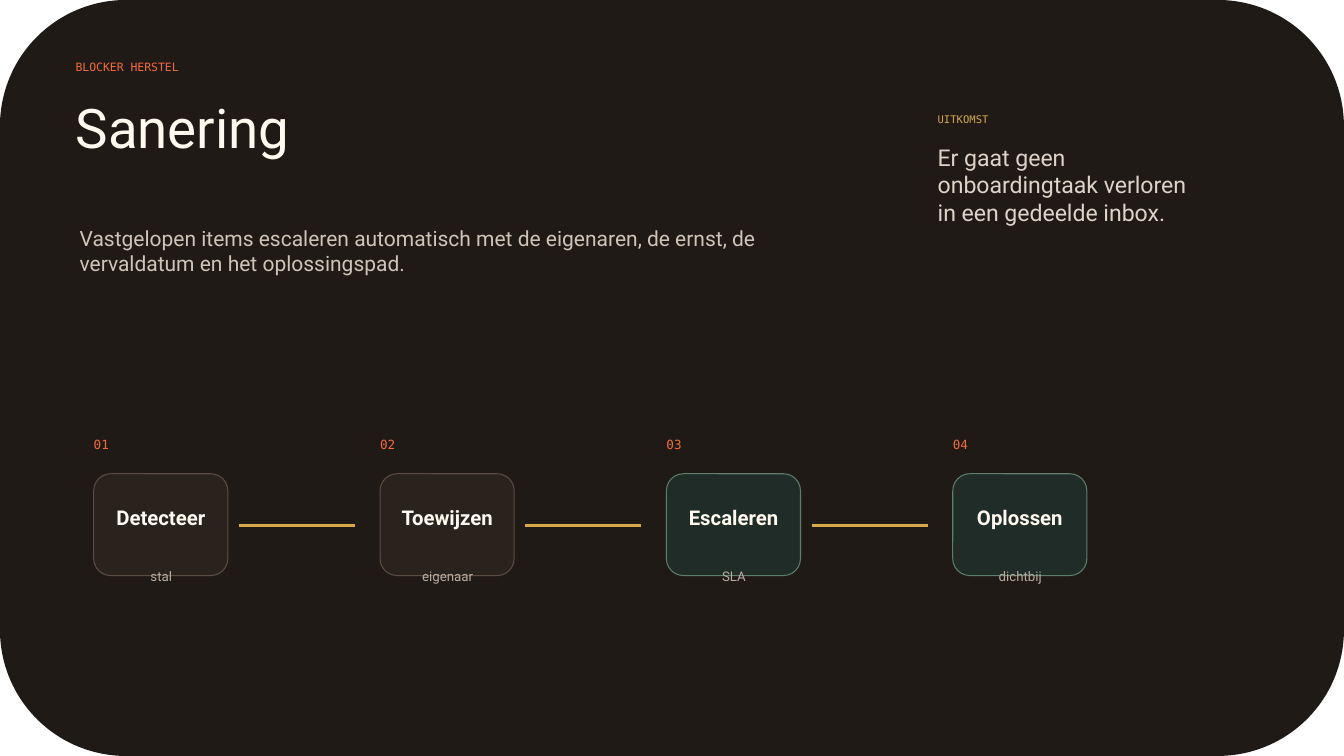
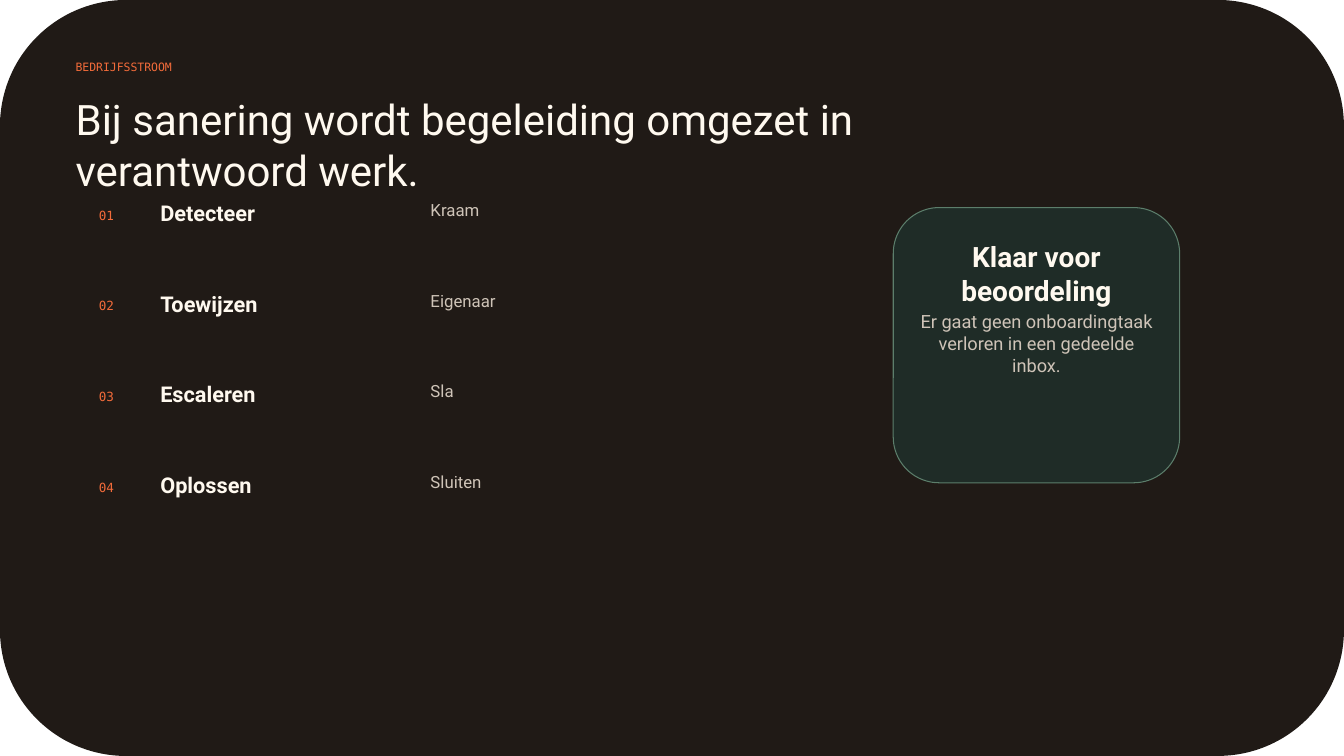
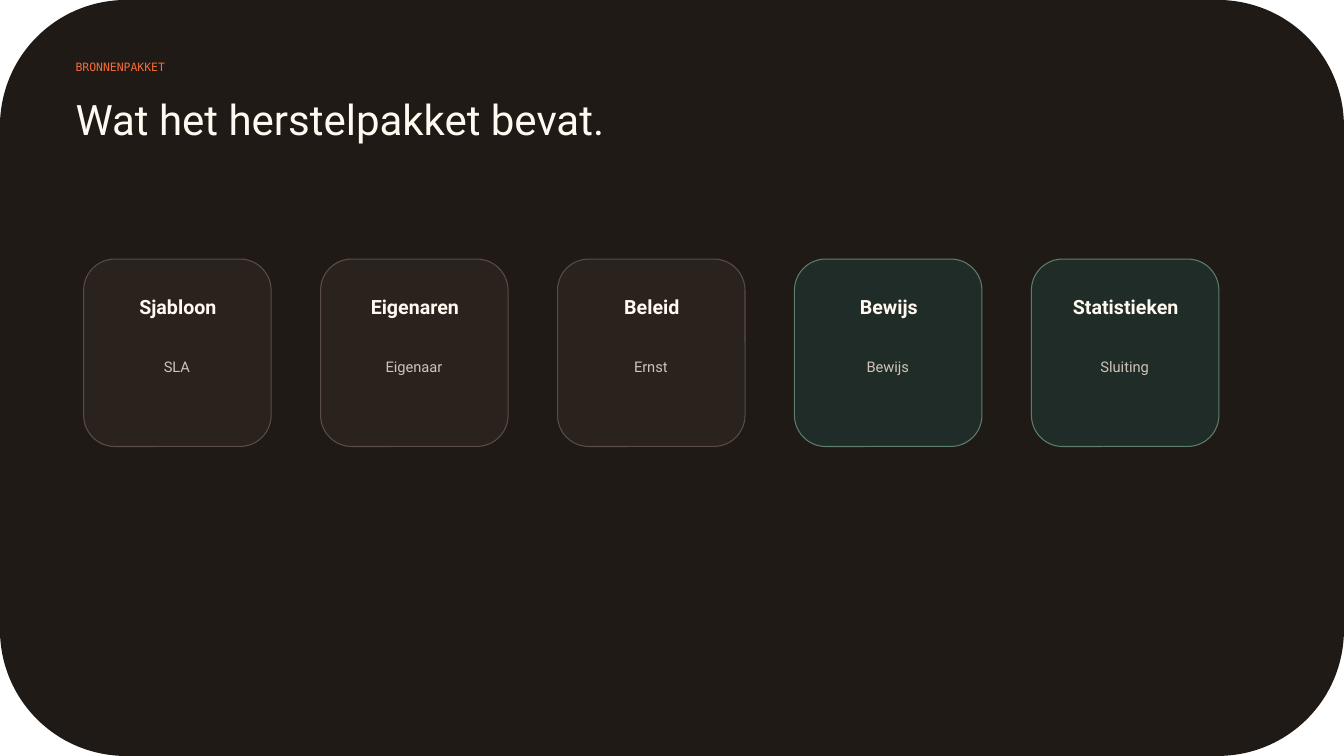
from dataclasses import dataclass

from lxml import etree
from pptx import Presentation
from pptx.dml.color import RGBColor
from pptx.enum.shapes import MSO_CONNECTOR, MSO_SHAPE
from pptx.enum.text import MSO_ANCHOR, MSO_AUTO_SIZE, PP_ALIGN
from pptx.oxml.ns import qn
from pptx.util import Inches, Pt

LEFT, CENTER = PP_ALIGN.LEFT, PP_ALIGN.CENTER
TOP = MSO_ANCHOR.TOP
FIXED = MSO_AUTO_SIZE.NONE
ROUND = MSO_SHAPE.ROUNDED_RECTANGLE
STRAIGHT = MSO_CONNECTOR.STRAIGHT
WIDE, HIGH = 13.33, 7.5


@dataclass(frozen=True)
class Theme:
    sans: str = "Roboto"
    mono: str = "DejaVu Sans Mono"
    back: str = "201A16"
    light: str = "FFF9EF"
    soft: str = "CFC4B8"
    pale: str = "DDD3C8"
    dim: str = "B9ACA0"
    accent: str = "F26B3A"
    gold: str = "D6A84F"
    link: str = "D8A84B"
    brown: tuple = ("2A221D", "5B4D44")
    green: tuple = ("1F2C27", "5C7E6B")
    hero: float = 39
    head: float = 30
    panel: float = 20
    quote: float = 16.5
    row: float = 15.5
    lead: float = 15
    step: float = 14.5
    card: float = 14
    note: float = 13
    cell: float = 12
    small: float = 10.5
    tiny: float = 9.5
    index: float = 9
    kicker: float = 8.2
    label: float = 7.5
    edge: float = 0.75
    stroke: float = 2.25


THEME = Theme()


def write(frame, text, size, color=THEME.light, font=THEME.sans, bold=False, align=LEFT):
    frame.auto_size = FIXED
    frame.word_wrap = True
    frame.vertical_anchor = TOP
    frame.margin_left = frame.margin_right = 0
    frame.margin_top = frame.margin_bottom = 0
    para = frame.paragraphs[0]
    para.alignment = align
    run = para.add_run()
    run.text = text
    run.font.name = font
    run.font.size = Pt(size)
    run.font.bold = bold
    run.font.color.rgb = RGBColor.from_string(color)


class Deck:
    def __init__(self, theme):
        self.theme = theme
        self.show = Presentation()
        self.show.slide_width = Inches(WIDE)
        self.show.slide_height = Inches(HIGH)
        self.slide = None

    def start(self, kicker, title, size, width=8.31, height=0.71):
        t = self.theme
        self.slide = self.show.slides.add_slide(self.show.slide_layouts[5])
        head = self.slide.shapes.title
        head.left, head.top = Inches(0.75), Inches(0.93)
        head.width, head.height = Inches(width), Inches(height)
        write(head.text_frame, title, size)
        back = self.box(0, 0, WIDE, HIGH, t.back)
        head._element.addprevious(back._element)
        self.mono(0.75, 0.6, 4.59, 0.28, kicker, t.kicker)

    def box(self, x, y, w, h, fill, edge=None):
        shape = self.slide.shapes.add_shape(ROUND, Inches(x), Inches(y), Inches(w), Inches(h))
        shape.shadow.inherit = False
        shape.fill.solid()
        shape.fill.fore_color.rgb = RGBColor.from_string(fill)
        if edge:
            shape.line.color.rgb = RGBColor.from_string(edge)
            shape.line.width = Pt(self.theme.edge)
        else:
            shape.line.fill.background()
        return shape

    def text(self, x, y, w, h, text, size, **style):
        box = self.slide.shapes.add_textbox(Inches(x), Inches(y), Inches(w), Inches(h))
        write(box.text_frame, text, size, **style)

    def mono(self, x, y, w, h, text, size, color=THEME.accent):
        self.text(x, y, w, h, text, size, color=color, font=self.theme.mono)

    def line(self, x, y, end):
        line = self.slide.shapes.add_connector(STRAIGHT, Inches(x), Inches(y), Inches(end), Inches(y))
        line.line.color.rgb = RGBColor.from_string(self.theme.link)
        line.line.width = Pt(self.theme.stroke)
        etree.SubElement(line._element.spPr, qn("a:effectLst"))

    def step(self, x, num, name, note, tone):
        t = self.theme
        self.mono(x, 4.33, 0.57, 0.24, f"{num:02}", t.index)
        self.box(x, 4.7, 1.33, 1.01, *tone)
        self.text(x + 0.13, 5.01, 1.07, 0.28, name, t.step, bold=True, align=CENTER)
        self.text(x + 0.09, 5.64, 1.16, 0.24, note, t.tiny, color=t.dim, align=CENTER)

    def row(self, y, num, name, note):
        t = self.theme
        self.mono(0.98, y + 0.08, 0.55, 0.24, f"{num:02}", t.index)
        self.text(1.59, y, 2.84, 0.28, name, t.row, bold=True)
        self.text(4.27, y, 3.94, 0.31, note, t.cell, color=t.soft)

    def card(self, x, name, note, tone):
        t = self.theme
        self.box(x, 2.57, 1.86, 1.86, *tone)
        self.text(x + 0.19, 2.93, 1.49, 0.33, name, t.card, bold=True, align=CENTER)
        self.text(x + 0.15, 3.55, 1.55, 0.57, note, t.small, color=t.soft, align=CENTER)


def main():
    t = THEME
    deck = Deck(t)
    names = ("Detecteer", "Toewijzen", "Escaleren", "Oplossen")
    goal = "Er gaat geen onboardingtaak verloren in een gedeelde inbox."

    deck.start("BLOCKER HERSTEL", "Sanering", t.hero, height=0.98)
    deck.text(
        0.79, 2.24, 6.78, 0.66,
        "Vastgelopen items escaleren automatisch met de eigenaren, de ernst, "
        "de vervaldatum en het oplossingspad.",
        t.lead, color=t.soft,
    )
    notes = ("stal", "eigenaar", "SLA", "dichtbij")
    for i, (name, note) in enumerate(zip(names, notes)):
        x = 0.93 + i * 2.84
        deck.step(x, i + 1, name, note, t.brown if i < 2 else t.green)
        if i < len(names) - 1:
            deck.line(x + 1.44, 5.21, x + 2.59)
    deck.mono(9.3, 1.12, 1.2, 0.2, "UITKOMST", t.label, t.gold)
    deck.text(9.3, 1.42, 2.68, 1.42, goal, t.quote, color=t.pale)

    deck.start(
        "BEDRIJFSSTROOM",
        "Bij sanering wordt begeleiding omgezet in verantwoord werk.",
        t.head, width=9.41,
    )
    notes = ("Kraam", "Eigenaar", "Sla", "Sluiten")
    for i, (name, note) in enumerate(zip(names, notes)):
        deck.row(1.98 + i * 0.9, i + 1, name, note)
    deck.box(8.86, 2.06, 2.84, 2.73, *t.green)
    deck.text(9.13, 2.38, 2.3, 0.46, "Klaar voor beoordeling", t.panel, bold=True, align=CENTER)
    deck.text(9.13, 3.08, 2.3, 0.98, goal, t.note, color=t.soft, align=CENTER)

    deck.start("BRONNENPAKKET", "Wat het herstelpakket bevat.", t.head)
    cards = (
        ("Sjabloon", "SLA"),
        ("Eigenaren", "Eigenaar"),
        ("Beleid", "Ernst"),
        ("Bewijs", "Bewijs"),
        ("Statistieken", "Sluiting"),
    )
    for i, (name, note) in enumerate(cards):
        deck.card(0.83 + i * 2.35, name, note, t.brown if i < 3 else t.green)

    deck.show.save("out.pptx")


if __name__ == "__main__":
    main()
